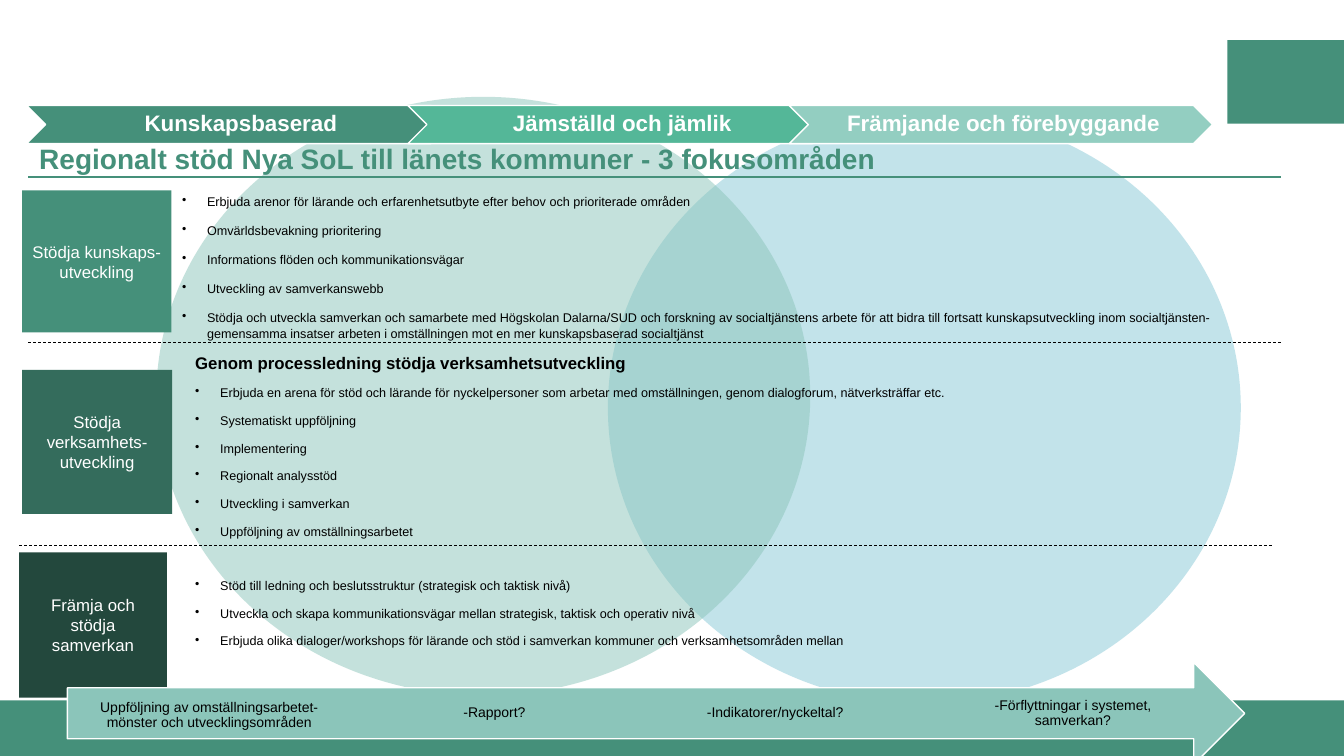
from lxml import etree
from pptx import Presentation
from pptx import util as u
from pptx.dml.color import RGBColor
from pptx.enum import dml, shapes, text
from pptx.oxml.ns import qn

COLORS = {
    "green": "45907A", "forest": "346C5C", "pine": "23483D", "mint": "54B798",
    "pale": "93CEC1", "sage": "8BC5BA", "blue": "87C8D7",
    "white": "FFFFFF", "black": "000000",
}
SHAPE = shapes.MSO_SHAPE


def rgb(name):
    return RGBColor.from_string(COLORS[name])


class Deck:
    font = "Arial"
    body = {"size": u.Pt(9), "bold": False}
    heading = {"size": u.Pt(12), "bold": True}
    side = {"size": u.Pt(12), "bold": False}
    title = {"size": u.Pt(20), "bold": True}
    banner = {"size": u.Pt(16), "bold": True}
    label = {"size": u.Pt(10), "bold": False}

    def __init__(self, width, height):
        self.prs = Presentation()
        self.prs.slide_width = u.Cm(width)
        self.prs.slide_height = u.Cm(height)
        self.s = self.prs.slides.add_slide(self.prs.slide_layouts[6])

    def shape(self, kind, box, fill, line=None, alpha=None):
        sp = self.s.shapes.add_shape(kind, *map(u.Cm, box))
        sp.shadow.inherit = False
        sp.fill.solid()
        sp.fill.fore_color.rgb = rgb(fill)
        if alpha:
            clr = sp._element.spPr.find(qn("a:solidFill")).find(qn("a:srgbClr"))
            etree.SubElement(clr, qn("a:alpha")).set("val", str(alpha * 1000))
        if line:
            sp.line.color.rgb = rgb(line)
            sp.line.width = u.Pt(1)
        else:
            sp.line.fill.background()
        return sp

    def frame(self, sp, anchor="MIDDLE", insets=(0.25, 0.13, 0.25, 0.13)):
        tf = sp.text_frame
        left, top, right, bottom = map(u.Cm, insets)
        formats = {
            "word_wrap": True, "vertical_anchor": text.MSO_ANCHOR[anchor],
            "margin_left": left, "margin_top": top,
            "margin_right": right, "margin_bottom": bottom,
        }
        for key, value in formats.items():
            setattr(tf, key, value)
        return tf

    def words(self, p, content, style, color, align="CENTER", spacing=1.0, before=0):
        formats = {
            "alignment": text.PP_ALIGN[align], "line_spacing": spacing,
            "space_before": u.Pt(before),
        }
        for key, value in formats.items():
            setattr(p, key, value)
        r = p.add_run()
        r.text = content
        for key, value in {"name": self.font, **style}.items():
            setattr(r.font, key, value)
        r.font.color.rgb = rgb(color)

    def textbox(self, box, **frame):
        return self.frame(self.s.shapes.add_textbox(*map(u.Cm, box)), **frame)

    def bullets(self, box, items, spacing, heading=None):
        tf = self.textbox(box, anchor="TOP")
        lines = ([heading] if heading else []) + items
        for i, content in enumerate(lines):
            p = tf.paragraphs[0] if i == 0 else tf.add_paragraph()
            is_heading = content == heading
            style = self.heading if is_heading else self.body
            self.words(p, content, style, "black", "LEFT", spacing, 10 if i else 0)
            if not is_heading:
                pPr = p._p.get_or_add_pPr()
                pPr.set("marL", str(u.Cm(0.63)))
                pPr.set("indent", str(u.Cm(-0.63)))
                etree.SubElement(pPr, qn("a:buChar")).set("char", "•")

    def rule(self, x, y, width, color, weight, dashed=False):
        c = self.s.shapes.add_connector(
            shapes.MSO_CONNECTOR.STRAIGHT, u.Cm(x), u.Cm(y), u.Cm(x + width), u.Cm(y))
        c.line.color.rgb = rgb(color)
        c.line.width = u.Pt(weight)
        if dashed:
            c.line.dash_style = dml.MSO_LINE.DASH
        etree.SubElement(c._element.spPr, qn("a:effectLst"))


KNOWLEDGE = [
    "Erbjuda arenor för lärande och erfarenhetsutbyte efter behov och prioriterade områden",
    "Omvärldsbevakning prioritering",
    "Informations flöden och kommunikationsvägar",
    "Utveckling av samverkanswebb",
    "Stödja och utveckla samverkan och samarbete med Högskolan Dalarna/SUD och forskning av "
    "socialtjänstens arbete för att bidra till fortsatt kunskapsutveckling inom socialtjänsten- "
    "gemensamma insatser arbeten i omställningen mot en mer kunskapsbaserad socialtjänst",
]
OPERATIONS = [
    "Erbjuda en arena för stöd och lärande för nyckelpersoner som arbetar med omställningen, "
    "genom dialogforum, nätverksträffar etc.",
    "Systematiskt uppföljning",
    "Implementering",
    "Regionalt analysstöd",
    "Utveckling i samverkan",
    "Uppföljning av omställningsarbetet",
]
COOPERATION = [
    "Stöd till ledning och beslutsstruktur (strategisk och taktisk nivå)",
    "Utveckla och skapa kommunikationsvägar mellan strategisk, taktisk och operativ nivå",
    "Erbjuda olika dialoger/workshops för lärande och stöd i samverkan kommuner och "
    "verksamhetsområden mellan",
]
FOCUS_AREAS = [
    ("Stödja kunskaps-utveckling", (0.56, 4.8, 3.76, 3.58), "green"),
    ("Stödja verksamhets-utveckling", (0.56, 9.32, 3.78, 3.63), "forest"),
    ("Främja och stödja samverkan", (0.48, 13.92, 3.73, 3.66), "pine"),
]
PRINCIPLES = [
    ("Kunskapsbaserad", "green"),
    ("Jämställd och jämlik", "mint"),
    ("Främjande och förebyggande", "pale"),
]
FOLLOW_UP = [
    ("Uppföljning av omställningsarbetet-mönster och utvecklingsområden", 2.44, 17.4, 5.66),
    ("-Rapport?", 9.63, 17.32, 5.66),
    ("-Indikatorer/nyckeltal?", 16.41, 17.32, 6.25),
    ("-Förflyttningar i systemet, samverkan?", 24.21, 17.35, 5.66),
]


def main():
    d = Deck(33.87, 19.05)
    d.shape(SHAPE.RECTANGLE, (30.93, 1.01, 2.94, 2.11), "green")
    d.shape(SHAPE.RECTANGLE, (0, 17.65, 33.87, 1.4), "green")
    d.shape(SHAPE.OVAL, (15.32, 2.82, 15.95, 14.91), "blue", alpha=50)
    d.shape(SHAPE.OVAL, (3.94, 2.44, 16.48, 15.09), "sage", alpha=50)

    tf = d.textbox((0.74, 3.5, 28.93, 1.1))
    d.words(tf.paragraphs[0], "Regionalt stöd Nya SoL till länets kommuner - 3 fokusområden",
            d.title, "green", "LEFT", 0.9)

    d.bullets((4.34, 4.75, 27.79, 3.9), KNOWLEDGE, 1.0)
    for content, box, fill in FOCUS_AREAS:
        tf = d.frame(d.shape(SHAPE.RECTANGLE, box, fill), insets=(0.24, 0.13, 0.24, 0.13))
        d.words(tf.paragraphs[0], content, d.side, "white")
    d.rule(0.71, 8.63, 31.57, "black", 0.5, dashed=True)
    d.rule(0.48, 13.75, 31.57, "black", 0.5, dashed=True)
    d.rule(0.71, 4.47, 31.57, "green", 1.5)
    d.bullets((4.67, 8.81, 27.79, 5), OPERATIONS, 0.9,
              "Genom processledning stödja verksamhetsutveckling")
    d.bullets((4.67, 14.48, 27.79, 2.2), COOPERATION, 0.9)

    for i, (content, fill) in enumerate(PRINCIPLES):
        sp = d.shape(SHAPE.CHEVRON, (0.67 + 9.61 * i, 2.66, 10.67, 0.96), fill, "white")
        tf = d.frame(sp, insets=(0.18, 0.05, 0.05, 0.05))
        d.words(tf.paragraphs[0], content, d.banner, "white", spacing=0.9)

    d.shape(SHAPE.RIGHT_ARROW, (1.7, 16.69, 29.67, 2.57), "sage", "white")
    for content, x, y, width in FOLLOW_UP:
        tf = d.textbox((x, y, width, 1.27), insets=(0, 0, 0, 0))
        d.words(tf.paragraphs[0], content, d.label, "black", spacing=0.9)

    d.prs.save("out.pptx")


if __name__ == "__main__":
    main()
